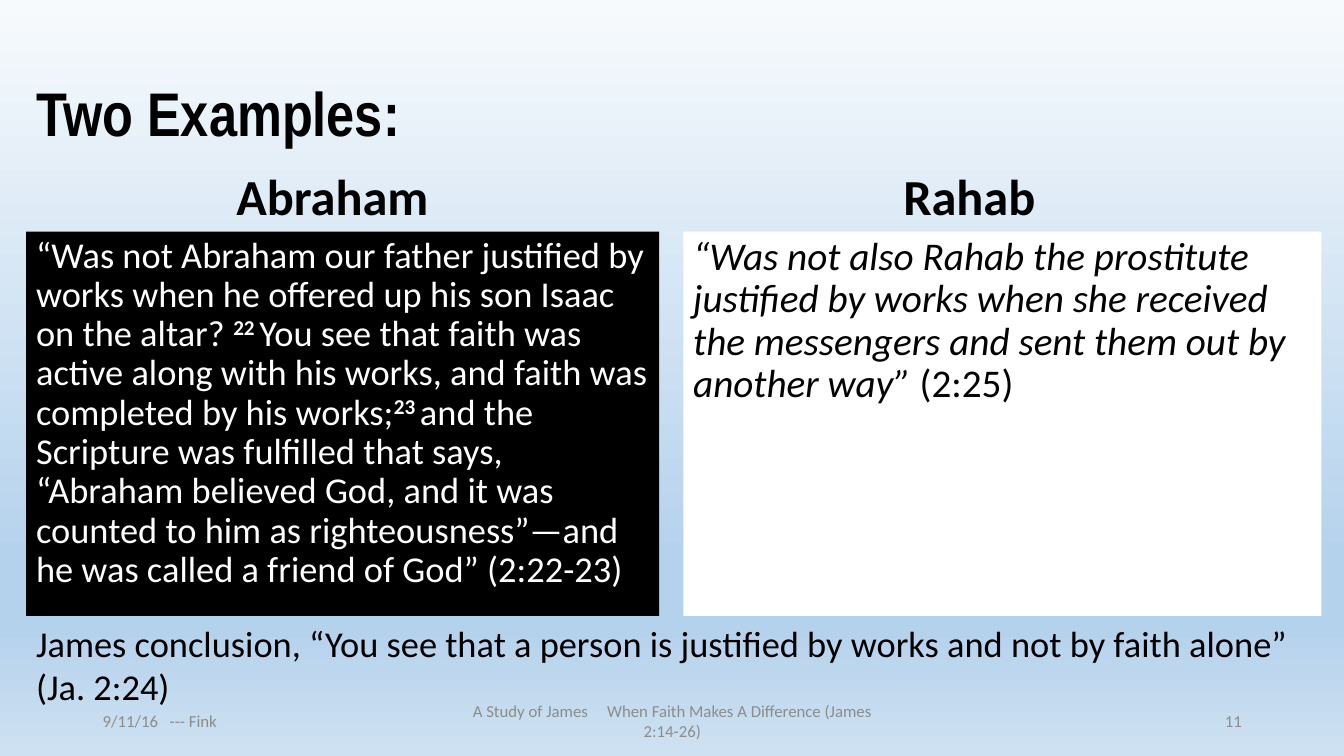
from copy import deepcopy
from dataclasses import dataclass

from pptx import Presentation
from pptx.dml.color import RGBColor
from pptx.enum.shapes import MSO_SHAPE
from pptx.enum.text import MSO_ANCHOR, PP_ALIGN
from pptx.oxml.ns import qn
from pptx.util import Cm, Pt

BLACK = RGBColor(0x00, 0x00, 0x00)
WHITE = RGBColor(0xFF, 0xFF, 0xFF)
GRAY = RGBColor(0x8C, 0x8C, 0x8C)
SKY_STOPS = [
    (0, RGBColor(0xF7, 0xFA, 0xFD)),
    (0.74, RGBColor(0xB5, 0xD2, 0xEC)),
    (0.83, RGBColor(0xB5, 0xD2, 0xEC)),
    (1, RGBColor(0xCE, 0xE1, 0xF2)),
]
TOP, MIDDLE, BOTTOM = MSO_ANCHOR.TOP, MSO_ANCHOR.MIDDLE, MSO_ANCHOR.BOTTOM
LEFT, CENTER, RIGHT = PP_ALIGN.LEFT, PP_ALIGN.CENTER, PP_ALIGN.RIGHT
RECTANGLE = MSO_SHAPE.RECTANGLE

MARGIN = 0.66
PANEL_TOP, PANEL_HEIGHT = 5.84, 9.68
FOOTER_TOP, FOOTER_HEIGHT = 17.65, 1.02


@dataclass
class Span:
    """A stretch of text; tracking is extra letter spacing in points."""
    text: str
    bold: bool = False
    italic: bool = False
    superscript: bool = False
    tracking: float = 0


ABRAHAM_QUOTE = [
    Span("“Was not Abraham our father justified by works when he offered up "
         "his son Isaac on the altar? "),
    Span("22 ", bold=True, superscript=True),
    Span("You see that faith was active along with his works, and faith was "
         "completed by his works;"),
    Span("23 ", bold=True, superscript=True),
    Span("and the Scripture was fulfilled that says, “Abraham believed God, "
         "and it was counted to him as righteousness”—and he was called a "
         "friend of God” (2:22-23)"),
]
RAHAB_QUOTE = [
    Span("“Was not also Rahab the prostitute justified by works when she "
         "received the messengers and sent them out by another way” ",
         italic=True),
    Span("(2:25)"),
]
CONCLUSION = [Span("James conclusion, “You see that a person is justified by "
                   "works and not by faith alone” (Ja. 2:24)")]
FOOTERS = [
    (2.34, 7.62, LEFT,
     [Span("9/11/16"), Span(" ", tracking=5.4), Span("--- Fink")]),
    (11.23, 11.43, CENTER,
     [Span("A Study of James"), Span(" ", tracking=10.8),
      Span("When Faith Makes A Difference (James 2:14-26)")]),
    (23.93, 7.62, RIGHT, [Span("11")]),
]


class SlideBuilder:
    def __init__(self, slide, font="Calibri"):
        self.slide = slide
        self.font = font

    def background(self, stops):
        """Fill the background with a gradient running from top to bottom."""
        fill = self.slide.background.fill
        fill.gradient()
        fill.gradient_angle = 270
        stop_list = self.slide.element.find(".//" + qn("a:gsLst"))
        for _ in range(len(stops) - len(stop_list)):
            stop_list.append(deepcopy(stop_list[0]))
        for stop, (position, color) in zip(fill.gradient_stops, stops):
            stop.position = position
            stop.color.rgb = color

    def set_text(self, shape, spans, size, color=BLACK, align=LEFT, anchor=TOP,
                 line_spacing=1.0, font=None):
        frame = shape.text_frame
        frame.word_wrap = True
        frame.vertical_anchor = anchor
        paragraph = frame.paragraphs[0]
        paragraph.alignment = align
        paragraph.line_spacing = line_spacing
        for span in spans:
            run = paragraph.add_run()
            run.text = span.text
            run.font.name = font or self.font
            run.font.size = Pt(size)
            run.font.color.rgb = color
            run.font.bold = span.bold
            run.font.italic = span.italic
            properties = run._r.get_or_add_rPr()
            if span.superscript:
                properties.set("baseline", "30000")
            if span.tracking:
                properties.set("spc", str(round(span.tracking * 100)))

    def text(self, box, spans, size, **style):
        shape = self.slide.shapes.add_textbox(*map(Cm, box))
        self.set_text(shape, spans, size, **style)

    def panel(self, box, fill, spans, size, **style):
        shape = self.slide.shapes.add_shape(RECTANGLE, *map(Cm, box))
        shape.shadow.inherit = False
        shape.fill.solid()
        shape.fill.fore_color.rgb = fill
        shape.line.fill.background()
        self.set_text(shape, spans, size, line_spacing=0.9, **style)

    def heading(self, box, text, size, **style):
        self.text(box, [Span(text, bold=True)], size, line_spacing=0.9, **style)


def main():
    presentation = Presentation()
    presentation.slide_width = Cm(33.87)
    presentation.slide_height = Cm(19.05)
    slide = presentation.slides.add_slide(presentation.slide_layouts[6])
    builder = SlideBuilder(slide)

    builder.background(SKY_STOPS)
    builder.heading((MARGIN, 1.17, 30.89, 3.53), "Two Examples:", 44,
                    anchor=MIDDLE, font="Arial Narrow")
    builder.heading((1.37, 4.29, 14.02, 1.55), "Abraham", 36,
                    align=CENTER, anchor=BOTTOM)
    builder.panel((MARGIN, PANEL_TOP, 15.95, PANEL_HEIGHT), BLACK,
                  ABRAHAM_QUOTE, 26, color=WHITE)
    builder.heading((17.32, 3.86, 14.22, 1.98), "Rahab", 36,
                    align=CENTER, anchor=BOTTOM)
    builder.panel((17.22, PANEL_TOP, 16.08, PANEL_HEIGHT), WHITE,
                  RAHAB_QUOTE, 28)
    builder.text((MARGIN, PANEL_TOP + PANEL_HEIGHT, 32.64, 3.51),
                 CONCLUSION, 26)
    for left, width, align, spans in FOOTERS:
        builder.text((left, FOOTER_TOP, width, FOOTER_HEIGHT), spans, 12,
                     color=GRAY, align=align, anchor=MIDDLE)

    presentation.save("out.pptx")


if __name__ == "__main__":
    main()
